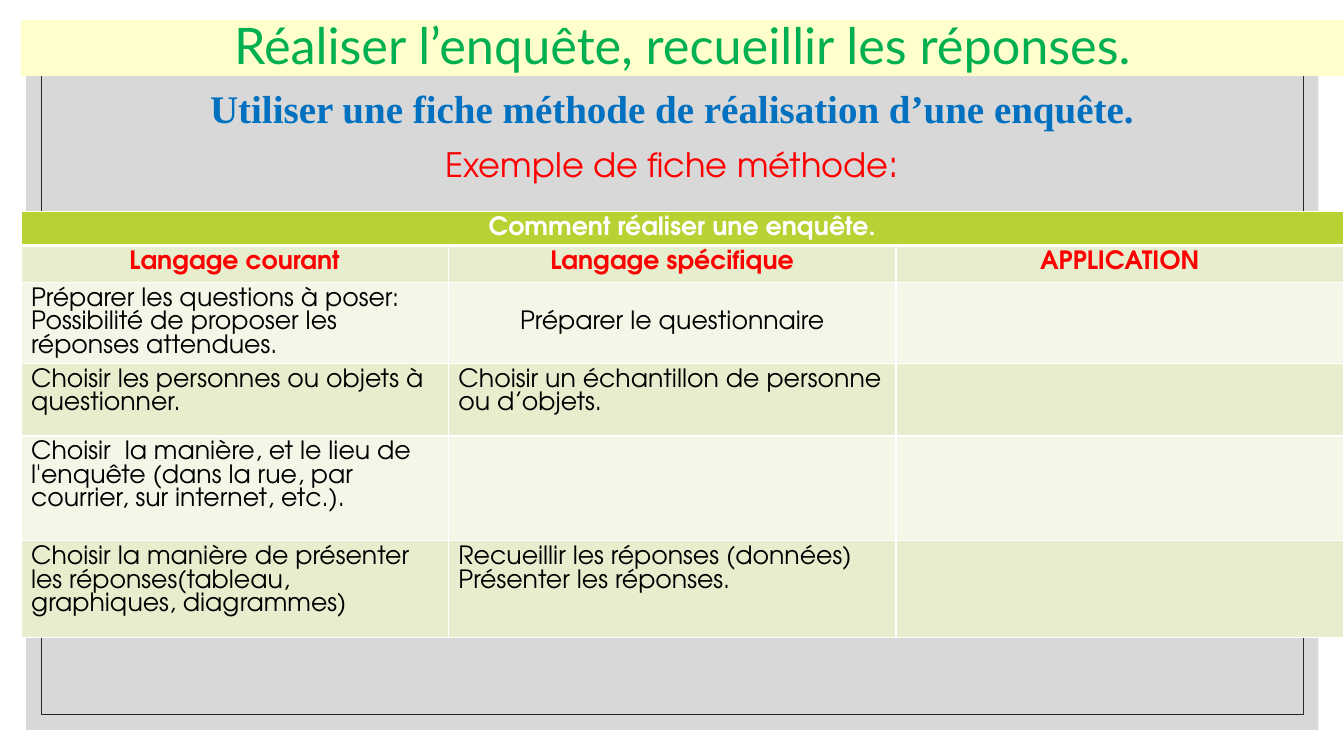
from lxml.etree import SubElement
from pptx import Presentation
from pptx.dml.color import RGBColor
from pptx.enum.shapes import MSO_SHAPE as SHAPE
from pptx.enum.text import MSO_ANCHOR as ANCHOR, PP_ALIGN as ALIGN
from pptx.oxml.ns import qn
from pptx.util import Pt

TITLE = "Réaliser l’enquête, recueillir les réponses."
SUBTITLE = "Utiliser une fiche méthode de réalisation d’une enquête."
EXAMPLE = "Exemple de fiche méthode"
HEADING = "Comment réaliser une enquête."
COLUMNS = ["Langage courant", "Langage spécifique", "APPLICATION"]
STEPS = [
    (["Préparer les questions à poser:",
      "Possibilité de proposer les réponses attendues."],
     ["Préparer le questionnaire"]),
    (["Choisir les personnes ou objets à questionner."],
     ["Choisir un échantillon de personne ou d’objets."]),
    (["Choisir  la manière, et le lieu de l'enquête (dans la rue, par courrier, "
      "sur internet, etc.)."], []),
    (["Choisir la manière de présenter les réponses(tableau, graphiques, diagrammes)"],
     ["Recueillir les réponses (données)", "Présenter les réponses."]),
]
SANS = "TeX Gyre Adventor"
WHITE, RED, BLACK = "FFFFFF", "FF0000", "000000"
BANDS = ["E6EECE", "F3F7E8"]
WIDTH, HEIGHT = 960, 540
LEFT, TABLE_TOP = 15, 151.2
COL_WIDTHS = [305.3, 319.7, 319.7]
ROW_HEIGHTS = [23, 26.6, 57.8, 51.8, 74.9, 69.1]
LINE_PITCH = 16.85


def rgb(code):
    return RGBColor.from_string(code)


def add_run(p, text, size, font, color, bold=False):
    r = p.add_run()
    r.text = text
    r.font.size, r.font.name, r.font.bold = Pt(size), font, bold
    r.font.color.rgb = rgb(color)


def add_rect(s, x, y, w, h, fill=None, line=None):
    sp = s.shapes.add_shape(SHAPE.RECTANGLE, Pt(x), Pt(y), Pt(w), Pt(h))
    sp.shadow.inherit = False
    if fill:
        sp.fill.solid()
        sp.fill.fore_color.rgb = rgb(fill)
    else:
        sp.fill.background()
    if line:
        sp.line.color.rgb = rgb(line)
        sp.line.width = Pt(0.5)
    else:
        sp.line.fill.background()
    return sp


def set_borders(cell, **widths):
    """Draw white borders, 1 pt wide unless a side is given."""
    tc_pr = cell._tc.get_or_add_tcPr()
    for i, side in enumerate("LRTB"):
        ln = tc_pr.makeelement(qn(f"a:ln{side}"), {"w": str(Pt(widths.get(side, 1)))})
        SubElement(SubElement(ln, qn("a:solidFill")), qn("a:srgbClr"), val=WHITE)
        tc_pr.insert(i, ln)


def fill_cell(cell, lines, fill, color=BLACK, bold=False, align=ALIGN.LEFT):
    cell.fill.solid()
    cell.fill.fore_color.rgb = rgb(fill)
    tf = cell.text_frame
    for i, line in enumerate(lines):
        p = tf.add_paragraph() if i else tf.paragraphs[0]
        p.alignment, p.line_spacing = align, Pt(LINE_PITCH)
        add_run(p, line, 18, SANS, color, bold)


def add_frame(s):
    back = add_rect(s, 18.7, 18.7, 923, 502.6, fill="BFBFBF")
    color = back.fill._xPr.find(qn("a:solidFill")).find(qn("a:srgbClr"))
    SubElement(color, qn("a:alpha"), val="60000")
    add_rect(s, 29.5, 29.5, 901.4, 481, line="262626")


def add_headings(s):
    tf = add_rect(s, LEFT, 14.4, WIDTH - LEFT, 40, fill="FFFFCC").text_frame
    tf.vertical_anchor, tf.word_wrap = ANCHOR.MIDDLE, True
    p = tf.paragraphs[0]
    p.alignment, p.line_spacing = ALIGN.CENTER, 0.9
    add_run(p, TITLE, 36, "Lato", "00B050")

    tf = s.shapes.add_textbox(0, Pt(60.5), Pt(WIDTH), Pt(80)).text_frame
    tf.word_wrap = True
    subtitle, example = tf.paragraphs[0], tf.add_paragraph()
    for p in (subtitle, example):
        p.alignment, p.line_spacing, p.space_before = ALIGN.CENTER, 0.9, Pt(9)
    add_run(subtitle, SUBTITLE, 27.9, "Times New Roman", "0070C0", True)
    add_run(example, EXAMPLE, 24, SANS, RED)
    add_run(example, ":", 27.1, SANS, RED)


def add_method_table(s):
    frame = s.shapes.add_table(len(ROW_HEIGHTS), len(COL_WIDTHS), Pt(LEFT), Pt(TABLE_TOP),
                               Pt(sum(COL_WIDTHS)), Pt(sum(ROW_HEIGHTS)))
    table = frame.table
    table.first_row = table.horz_banding = False
    for col, width in zip(table.columns, COL_WIDTHS):
        col.width = Pt(width)
    for row, height in zip(table.rows, ROW_HEIGHTS):
        row.height = Pt(height)

    table.cell(0, 0).merge(table.cell(0, 2))
    fill_cell(table.cell(0, 0), [HEADING], "B8D233", WHITE, True, ALIGN.CENTER)
    for c, name in enumerate(COLUMNS):
        set_borders(table.cell(0, c), B=3)
        fill_cell(table.cell(1, c), [name], BANDS[0], RED, True, ALIGN.CENTER)
        set_borders(table.cell(1, c), T=3)
    for r, step in enumerate(STEPS, 2):
        for c, lines in enumerate((*step, [])):
            fill_cell(table.cell(r, c), lines, BANDS[(r - 1) % 2])
            set_borders(table.cell(r, c))
    survey = table.cell(2, 1)
    survey.vertical_anchor = ANCHOR.MIDDLE
    survey.text_frame.paragraphs[0].alignment = ALIGN.CENTER


prs = Presentation()
prs.slide_width, prs.slide_height = Pt(WIDTH), Pt(HEIGHT)
s = prs.slides.add_slide(prs.slide_layouts[6])
add_frame(s)
add_headings(s)
add_method_table(s)
prs.save("out.pptx")
